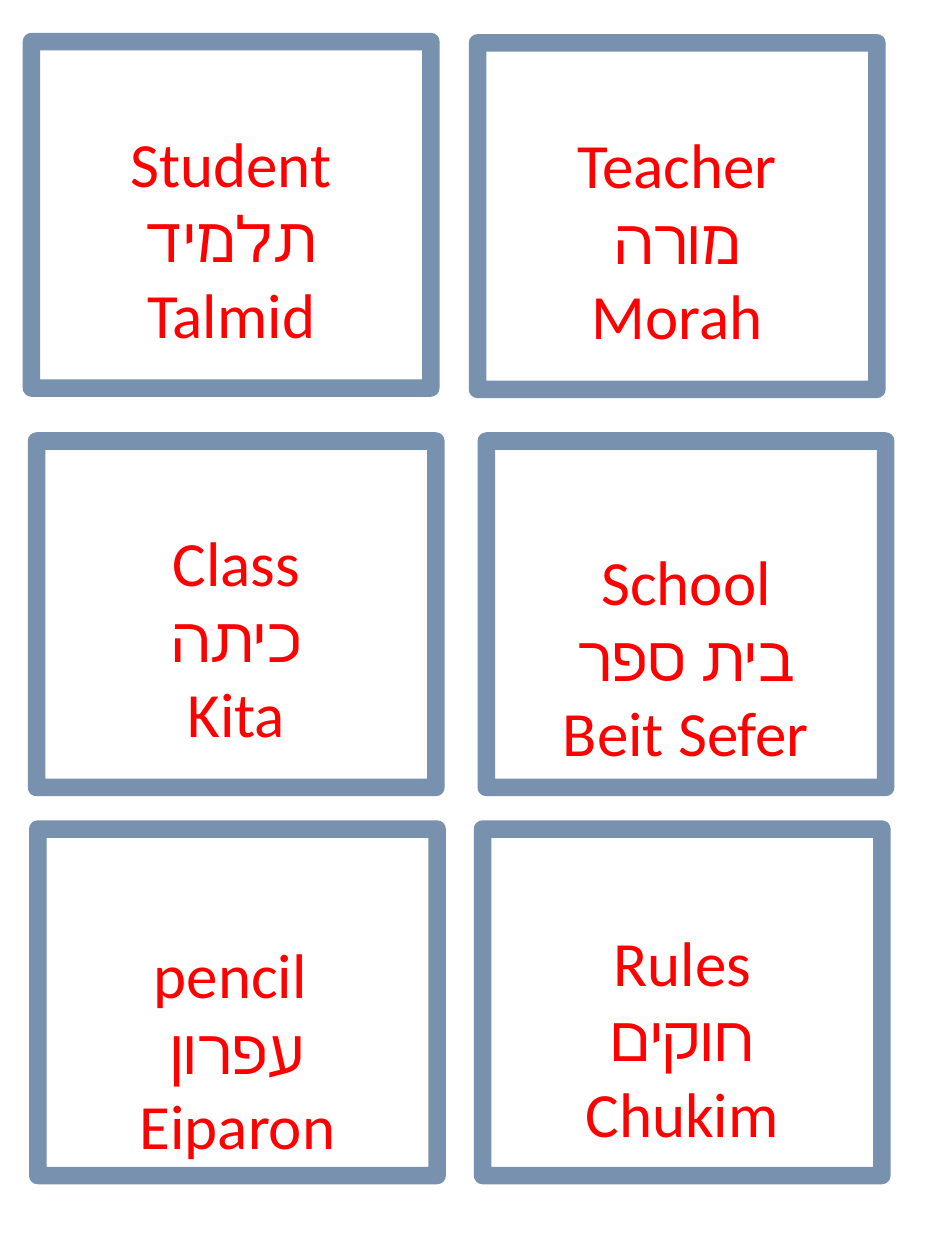
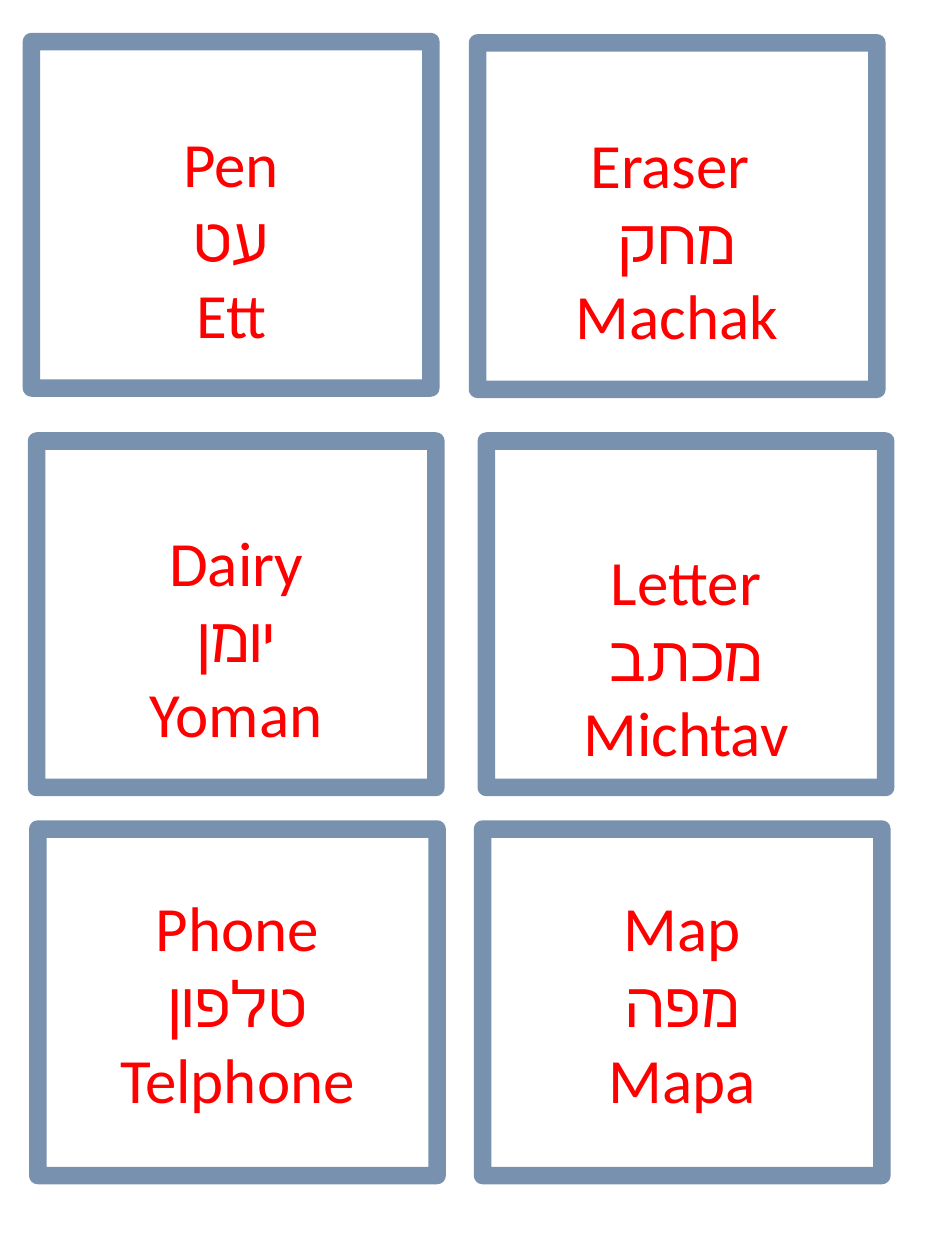
from dataclasses import dataclass

from lxml.etree import SubElement
from pptx import Presentation
from pptx.dml.color import RGBColor
from pptx.enum.shapes import MSO_SHAPE
from pptx.enum.text import MSO_ANCHOR, PP_ALIGN
from pptx.oxml.ns import qn
from pptx.util import Inches, Pt


@dataclass(frozen=True)
class Theme:
    paper: RGBColor = RGBColor(0xFF, 0xFF, 0xFF)
    frame: RGBColor = RGBColor(0x39, 0x5E, 0x89)
    word: RGBColor = RGBColor(0xFF, 0x00, 0x00)
    font: str = "Calibri"
    word_size: int = 36
    frame_width: int = 10
    frame_opacity: int = 68


theme = Theme()

# Card grid: two columns by three rows, each card slightly nudged
CARD_WIDTH, CARD_HEIGHT = 3.17, 2.75
COLUMNS = (0.25, 3.79)
ROWS = (0.33, 3.5, 6.58)
NUDGES = (
    ((0, 0), (0, 0.01)),
    ((0.04, 0), (0.07, 0)),
    ((0.05, 0), (0.04, 0)),
)
SIDE_INSET, EDGE_INSET = 0.1, 0.05

# Each card: English, Hebrew, transliteration, drop of the words below centre
SHEETS = (
    (
        (("Student", "תלמיד", "Talmid", 0.18), ("Teacher", "מורה", "Morah", 0.18)),
        (("Class", "כיתה", "Kita", 0.18), ("School", "בית ספר", "Beit Sefer", 0.33)),
        (("pencil ", "עפרון", "Eiparon", 0.37), ("Rules", "חוקים", "Chukim", 0.27)),
    ),
    (
        (("Pen", "עט", "Ett", 0.18), ("Eraser ", "מחק", "Machak", 0.18)),
        (("Dairy", "יומן", "Yoman", 0.18), ("Letter", "מכתב", "Michtav", 0.33)),
        (("Phone", "טלפון", "Telphone", 0), ("Map", "מפה", "Mapa", 0)),
    ),
)


def add_frame(slide, left, top):
    card = slide.shapes.add_shape(
        MSO_SHAPE.RECTANGLE, Inches(left), Inches(top),
        Inches(CARD_WIDTH), Inches(CARD_HEIGHT))
    card.shadow.inherit = False
    card.fill.solid()
    card.fill.fore_color.rgb = theme.paper
    card.line.color.rgb = theme.frame
    card.line.width = Pt(theme.frame_width)

    # Translucent border with rounded corners
    border = card.line._get_or_add_ln()
    alpha = SubElement(border.find(".//" + qn("a:srgbClr")), qn("a:alpha"))
    alpha.set("val", str(theme.frame_opacity * 1000))
    SubElement(border, qn("a:round"))
    return card


def add_words(card, words, drop):
    frame = card.text_frame
    frame.word_wrap = True
    frame.vertical_anchor = MSO_ANCHOR.MIDDLE
    frame.margin_left = frame.margin_right = Inches(SIDE_INSET)
    frame.margin_top = Inches(EDGE_INSET + 2 * drop)
    frame.margin_bottom = Inches(EDGE_INSET)
    lines = frame.paragraphs[0]
    lines.alignment = PP_ALIGN.CENTER
    for position, word in enumerate(words):
        if position:
            lines.add_line_break()
        run = lines.add_run()
        run.text = word
        run.font.name = theme.font
        run.font.size = Pt(theme.word_size)
        run.font.color.rgb = theme.word


deck = Presentation()
deck.slide_width, deck.slide_height = Inches(7.5), Inches(10)
blank_layout = deck.slide_layouts[6]

# One slide per sheet of six vocabulary cards
for sheet in SHEETS:
    slide = deck.slides.add_slide(blank_layout)
    for top, row_nudges, row_cards in zip(ROWS, NUDGES, sheet):
        for left, (right, down), (*words, drop) in zip(COLUMNS, row_nudges, row_cards):
            add_words(add_frame(slide, left + right, top + down), words, drop)

deck.save("out.pptx")
